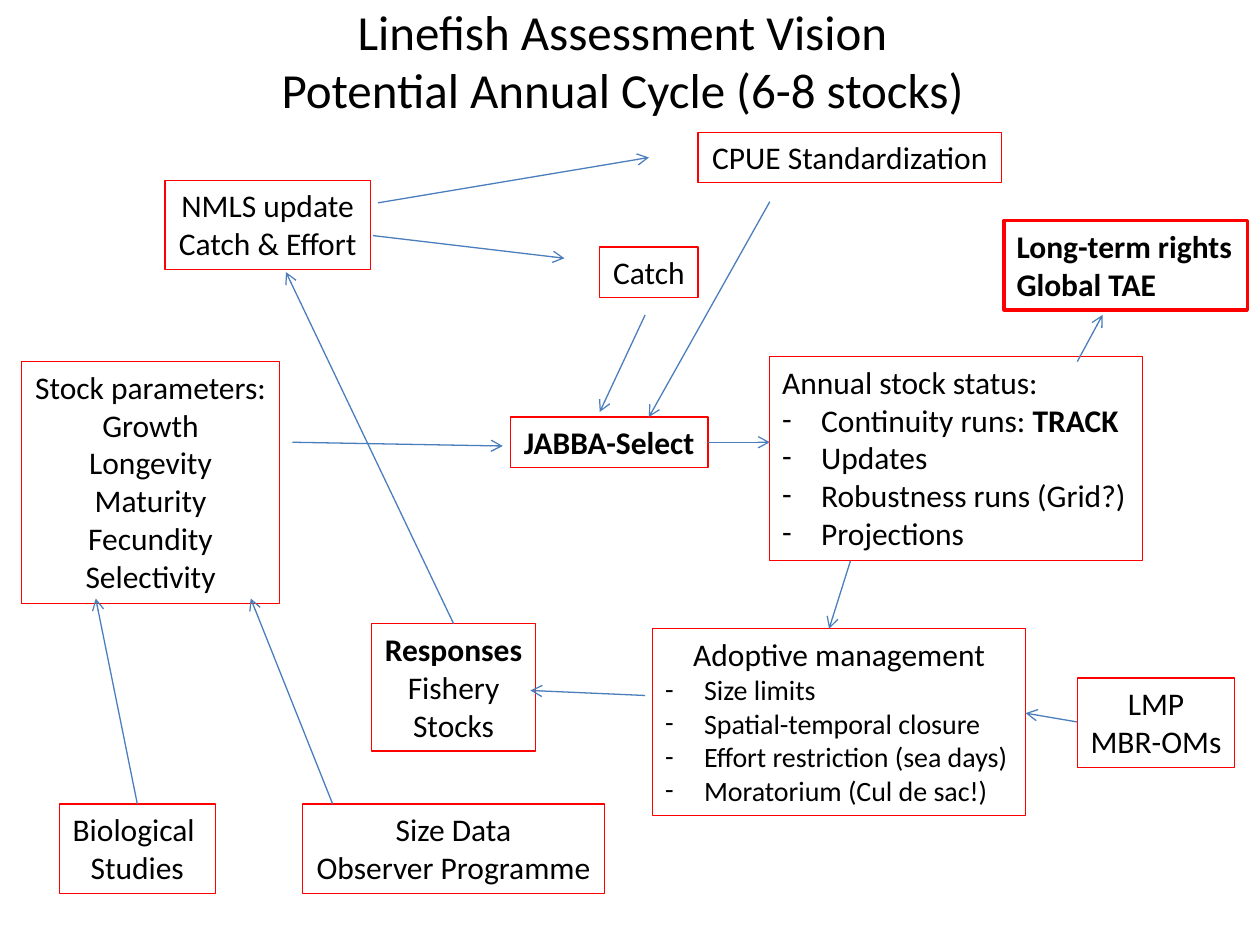
from dataclasses import dataclass

from lxml.etree import SubElement
from pptx import Presentation
from pptx.dml.color import RGBColor
from pptx.enum.shapes import MSO_CONNECTOR
from pptx.enum.text import MSO_ANCHOR, MSO_AUTO_SIZE, PP_ALIGN
from pptx.oxml.ns import qn
from pptx.slide import Slide
from pptx.text.text import _Paragraph as Paragraph
from pptx.util import Inches, Pt


@dataclass(frozen=True)
class Theme:
    font: str = "Calibri"
    text: RGBColor = RGBColor(0, 0, 0)
    border: RGBColor = RGBColor(0xFF, 0, 0)
    arrow: RGBColor = RGBColor(0x4B, 0x7E, 0xBC)
    background: RGBColor = RGBColor(0xFF, 0xFF, 0xFF)
    title_size: int = 28
    body_size: int = 18
    small_size: int = 16
    thin: float = 0.75
    thick: float = 2
    bullet_indent: float = 0.31


@dataclass(frozen=True)
class Run:
    text: str
    bold: bool = False


@dataclass(frozen=True)
class Line:
    runs: tuple[Run, ...]
    bullet: bool = False
    centered: bool = True
    size: int = Theme.body_size


@dataclass(frozen=True)
class Box:
    left: float
    top: float
    width: float
    height: float
    lines: tuple[Line, ...]
    emphasized: bool = False


@dataclass(frozen=True)
class Arrow:
    start: tuple[float, float]
    end: tuple[float, float]


THEME = Theme()


def centered(*texts: str) -> tuple[Line, ...]:
    return tuple(Line((Run(text),)) for text in texts)


def heading(text: str, is_centered: bool = True) -> Line:
    return Line((Run(text, bold=True),), centered=is_centered)


def bullets(*texts: str, size: int = THEME.body_size) -> tuple[Line, ...]:
    return tuple(
        Line((Run(text),), bullet=True, centered=False, size=size) for text in texts
    )


TITLE_LINES = ("Linefish Assessment Vision", "Potential Annual Cycle (6-8 stocks)")

STOCK_STATUS = (
    Line((Run("Annual stock status:"),), centered=False),
    Line((Run("Continuity runs: "), Run("TRACK", bold=True)), bullet=True, centered=False),
    *bullets("Updates", "Robustness runs (Grid?)", "Projections"),
)
MANAGEMENT = (
    *centered("Adoptive management"),
    *bullets(
        "Size limits",
        "Spatial-temporal closure",
        "Effort restriction (sea days)",
        "Moratorium (Cul de sac!)",
        size=THEME.small_size,
    ),
)
RIGHTS = (heading("Long-term rights", False), heading("Global TAE", False))

BOXES = (
    Box(0.17, 2.87, 2.05, 1.92, centered(
        "Stock parameters:", "Growth", "Longevity", "Maturity", "Fecundity", "Selectivity")),
    Box(1.31, 1.43, 1.63, 0.71, centered("NMLS update", "Catch & Effort")),
    Box(5.54, 1.05, 2.41, 0.4, centered("CPUE Standardization")),
    Box(4.76, 1.96, 0.78, 0.4, centered("Catch")),
    Box(4.05, 3.31, 1.57, 0.4, (heading("JABBA-Select"),)),
    Box(2.4, 6.38, 2.4, 0.71, centered("Size Data", "Observer Programme")),
    Box(0.47, 6.38, 1.24, 0.71, centered("Biological ", "Studies")),
    Box(6.11, 2.83, 2.96, 1.62, STOCK_STATUS),
    Box(5.18, 4.99, 2.96, 1.48, MANAGEMENT),
    Box(2.95, 4.95, 1.3, 1.01, (heading("Responses"), *centered("Fishery", "Stocks"))),
    Box(8.55, 5.38, 1.25, 0.71, centered("LMP", "MBR-OMs")),
    Box(7.97, 1.75, 1.93, 0.71, RIGHTS, emphasized=True),
)

ARROWS = (
    Arrow((8.55, 5.73), (8.14, 5.66)),  # LMP to management
    Arrow((3, 1.61), (5.15, 1.25)),  # NMLS to CPUE
    Arrow((2.96, 1.87), (4.48, 2.05)),  # NMLS to catch
    Arrow((2.32, 3.51), (3.99, 3.54)),  # stock parameters to JABBA
    Arrow((5.12, 2.5), (4.76, 3.27)),  # catch to JABBA
    Arrow((6.11, 1.6), (5.15, 3.31)),  # CPUE to JABBA
    Arrow((8.55, 2.87), (8.75, 2.5)),  # stock status to rights
    Arrow((6.75, 4.45), (6.58, 4.99)),  # stock status to management
    Arrow((5.12, 5.52), (4.21, 5.48)),  # management to responses
    Arrow((3.6, 4.95), (2.27, 2.16)),  # responses to NMLS
    Arrow((1.09, 6.38), (0.76, 4.75)),  # biology to stock parameters
    Arrow((2.64, 6.38), (1.99, 4.75)),  # size data to stock parameters
    Arrow((5.62, 3.51), (6.11, 3.51)),  # JABBA to stock status
)


def add_run(paragraph: Paragraph, content: Run, size: int) -> None:
    run = paragraph.add_run()
    run.text = content.text
    run.font.name = THEME.font
    run.font.size = Pt(size)
    run.font.bold = content.bold
    run.font.color.rgb = THEME.text


def add_dash_bullet(paragraph: Paragraph) -> None:
    properties = paragraph._p.get_or_add_pPr()
    indent = Inches(THEME.bullet_indent)
    properties.set("marL", str(indent))
    properties.set("indent", str(-indent))
    SubElement(properties, qn("a:buFont")).set("typeface", THEME.font)
    SubElement(properties, qn("a:buChar")).set("char", "-")


def format_title(slide: Slide) -> None:
    title = slide.shapes.title
    title.left, title.top = Inches(0.44), Inches(0.13)
    title.width, title.height = Inches(9), Inches(0.69)
    frame = title.text_frame
    frame.auto_size = MSO_AUTO_SIZE.NONE
    frame.vertical_anchor = MSO_ANCHOR.MIDDLE
    paragraph = frame.paragraphs[0]
    paragraph.alignment = PP_ALIGN.CENTER
    for index, text in enumerate(TITLE_LINES):
        if index:
            paragraph.add_line_break()
        add_run(paragraph, Run(text), THEME.title_size)


def add_box(slide: Slide, box: Box) -> None:
    shape = slide.shapes.add_textbox(
        Inches(box.left), Inches(box.top), Inches(box.width), Inches(box.height)
    )
    shape.line.color.rgb = THEME.border
    shape.line.width = Pt(THEME.thick if box.emphasized else THEME.thin)
    if box.emphasized:
        shape.fill.solid()
        shape.fill.fore_color.rgb = THEME.background
    frame = shape.text_frame
    frame.word_wrap = False
    frame.auto_size = MSO_AUTO_SIZE.SHAPE_TO_FIT_TEXT
    for index, line in enumerate(box.lines):
        paragraph = frame.add_paragraph() if index else frame.paragraphs[0]
        paragraph.alignment = PP_ALIGN.CENTER if line.centered else PP_ALIGN.LEFT
        if line.bullet:
            add_dash_bullet(paragraph)
        for run in line.runs:
            add_run(paragraph, run, line.size)


def add_arrow(slide: Slide, arrow: Arrow) -> None:
    connector = slide.shapes.add_connector(
        MSO_CONNECTOR.STRAIGHT, *(Inches(value) for value in arrow.start + arrow.end)
    )
    connector.line.color.rgb = THEME.arrow
    connector.line.width = Pt(THEME.thin)
    SubElement(connector.line._get_or_add_ln(), qn("a:tailEnd")).set("type", "arrow")
    SubElement(connector._element.spPr, qn("a:effectLst"))


def main() -> None:
    presentation = Presentation()
    presentation.slide_width, presentation.slide_height = Inches(10), Inches(7.5)
    slide = presentation.slides.add_slide(presentation.slide_layouts[5])
    format_title(slide)
    for box in BOXES:
        add_box(slide, box)
    for arrow in ARROWS:
        add_arrow(slide, arrow)
    presentation.save("out.pptx")


if __name__ == "__main__":
    main()
